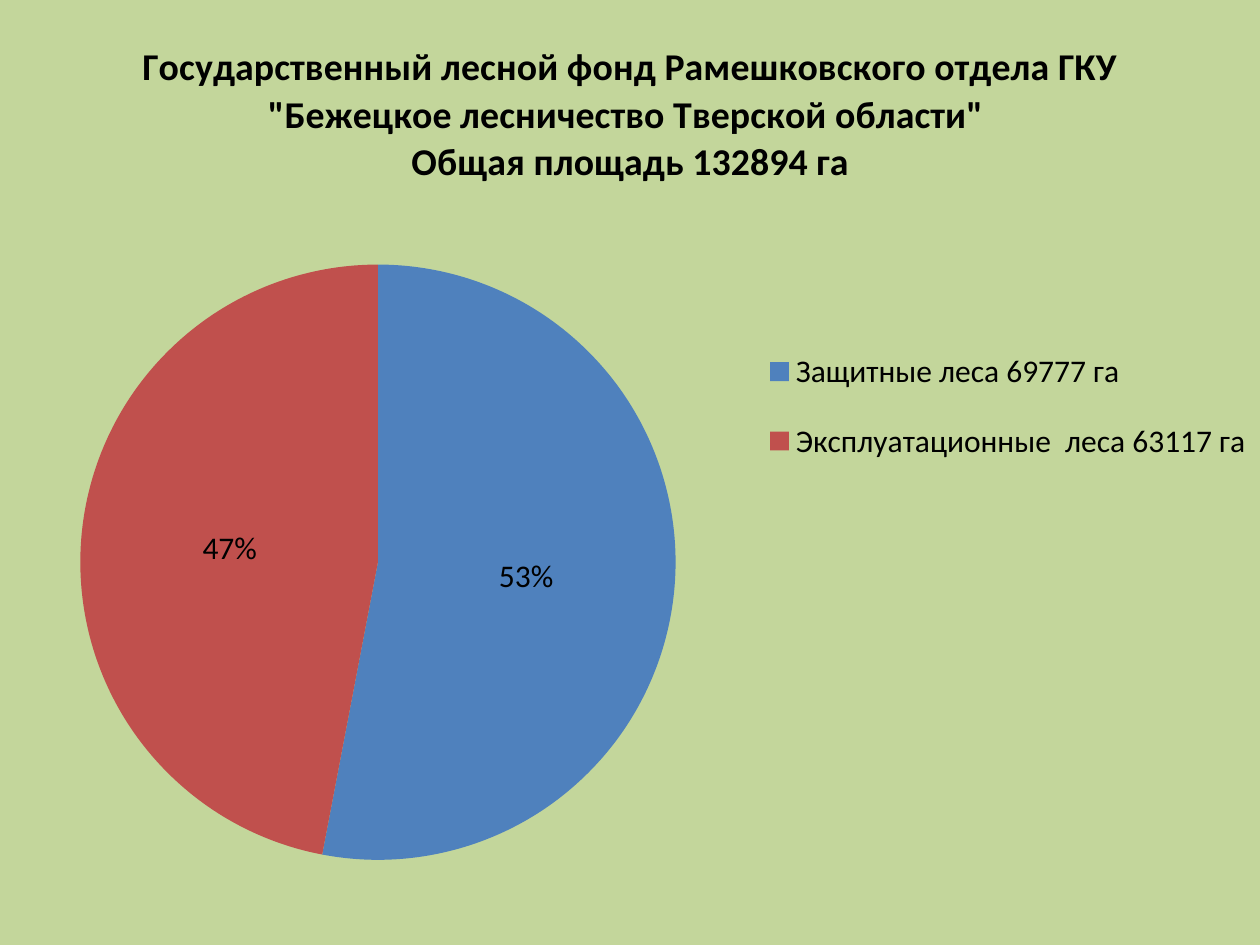
from lxml import etree
from pptx import Presentation
from pptx.chart.data import CategoryChartData
from pptx.dml.color import RGBColor as RGB
from pptx.enum.chart import XL_CHART_TYPE as Kind
from pptx.enum.chart import XL_LABEL_POSITION as Spot
from pptx.enum.chart import XL_LEGEND_POSITION as Side
from pptx.oxml import parse_xml
from pptx.oxml.ns import nsdecls, qn
from pptx.util import Inches, Pt

# Content
TITLE = [
    'Государственный лесной фонд Рамешковского отдела ГКУ "Бежецкое лесничество Тверской области" ',
    "Общая площадь 132894 га",
]
SHARES = [
    ("Защитные леса 69777 га", 53, "blue"),
    ("Эксплуатационные  леса 63117 га", 47, "red"),
]
COLORS = {"blue": "4F81BD", "red": "C0504D", "green": "C3D69B", "black": "000000"}
FONT = "Calibri"

# Places as shares of the chart: left, top, width, height
PIE = (0.06, 0.28, 0.48, 0.63)
KEY = (0.6, 0.34, 0.4, 0.18)
HEAD = (0.11, 0.04)


def style(font, size, bold=False):
    font.name, font.size, font.bold = FONT, Pt(size), bold
    font.color.rgb = RGB.from_string(COLORS["black"])


def place(node, box, after=None, inner=False):
    """Give a chart part a manual layout."""
    for old in node.findall(qn("c:layout")):
        node.remove(old)
    layout = parse_xml(f"<c:layout {nsdecls('c')}><c:manualLayout/></c:layout>")
    rules = [("layoutTarget", "inner")] if inner else []
    rules += [("xMode", "edge"), ("yMode", "edge")]
    rules += zip("xywh", map(str, box))
    for tag, val in rules:
        etree.SubElement(layout[0], qn(f"c:{tag}")).set("val", val)
    if after is None:
        node.insert(0, layout)
    else:
        node.find(qn(after)).addnext(layout)


# Slide
deck = Presentation()
deck.slide_width, deck.slide_height = Inches(10), Inches(7.5)
slide = deck.slides.add_slide(deck.slide_layouts[6])

# Pie over the whole slide
data = CategoryChartData()
data.categories = [name for name, _, _ in SHARES]
data.add_series("Series 1", [val for _, val, _ in SHARES])
chart = slide.shapes.add_chart(
    Kind.PIE, 0, 0, deck.slide_width, deck.slide_height, data
).chart
style(chart.font, 18)
plot = chart.plots[0]
plot.vary_by_categories = True
for i, (_, _, hue) in enumerate(SHARES):
    fill = plot.series[0].points[i].format.fill
    fill.solid()
    fill.fore_color.rgb = RGB.from_string(COLORS[hue])

# Percent labels
labels = plot.series[0].data_labels
labels.show_percentage, labels.show_value = True, False
labels.number_format, labels.number_format_is_linked = "0%", False
labels.position = Spot.CENTER
style(labels.font, 18)

# Title
chart.has_title = True
frame = chart.chart_title.text_frame
for i, line in enumerate(TITLE):
    para = frame.add_paragraph() if i else frame.paragraphs[0]
    run = para.add_run()
    run.text = line
    style(run.font, 21.6, True)
chart.chart_title.include_in_layout = False

# Legend
chart.has_legend = True
chart.legend.position = Side.RIGHT
chart.legend.include_in_layout = False
style(chart.legend.font, 18)

# Layout and chart background
root = chart.element
body = root.find(qn("c:chart"))
place(body.find(qn("c:title")), HEAD, "c:tx")
place(body.find(qn("c:plotArea")), PIE, inner=True)
place(body.find(qn("c:legend")), KEY, "c:legendPos")
body.addnext(parse_xml(
    f"<c:spPr {nsdecls('c', 'a')}><a:solidFill><a:srgbClr val=\"{COLORS['green']}\"/>"
    "</a:solidFill><a:ln><a:noFill/></a:ln></c:spPr>"
))

deck.save("out.pptx")
